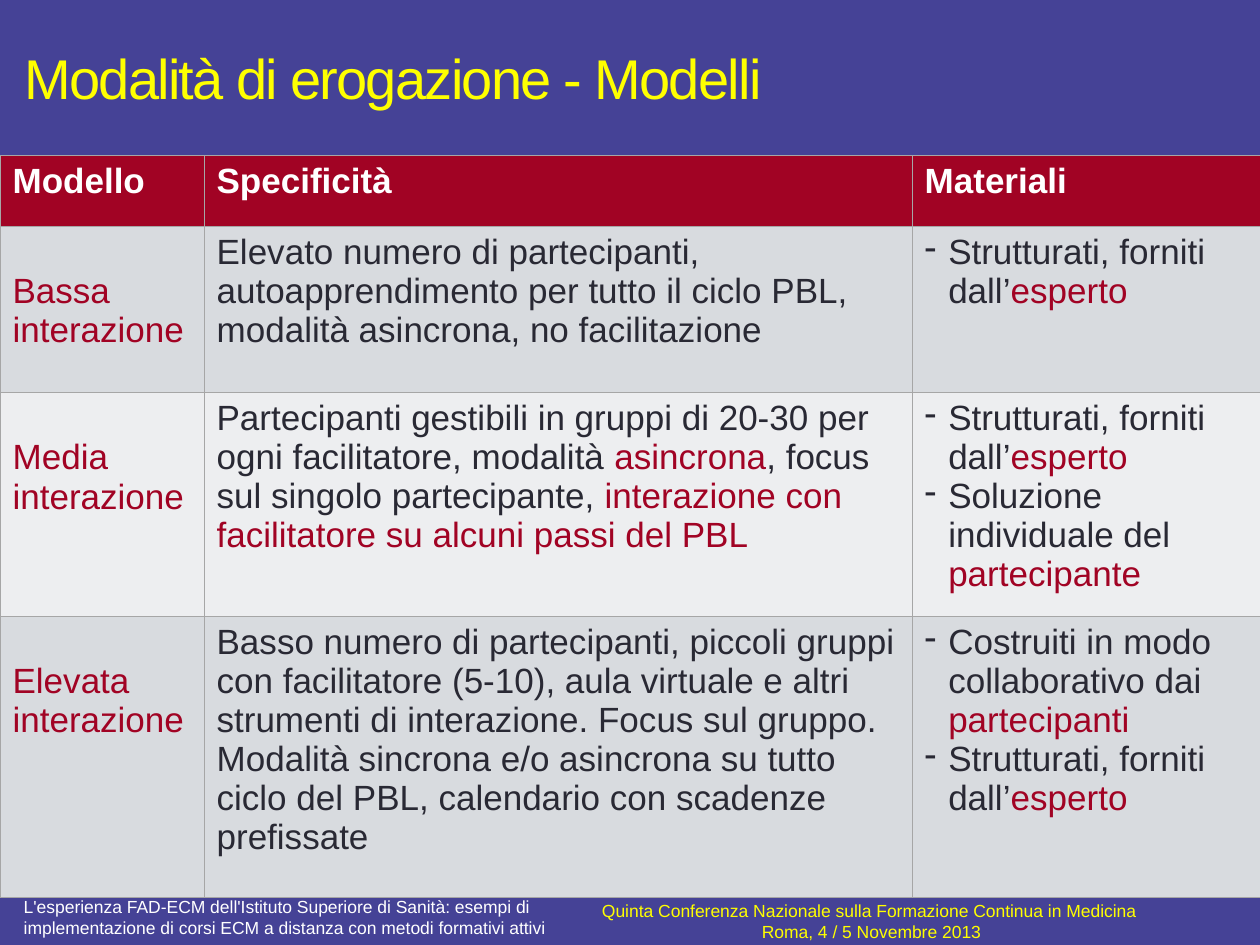
import pptx
import pptx.util
import pptx.dml.color
import pptx.enum.shapes
import pptx.enum.text
import pptx.oxml
import pptx.oxml.ns

Pt = pptx.util.Pt
ANCHOR = pptx.enum.text.MSO_ANCHOR
ALIGN = pptx.enum.text.PP_ALIGN

FONT = "Arial"
BLUE, YELLOW, WHITE = "454296", "FFFF00", "FFFFFF"
RED, DARK, BORDER = "A10324", "292934", "A6A6A6"
BANDS = ["D8DBDF", "EDEEF0"]
COLUMNS = [116.6, 404.6, 199.5]
ROWS = [40.5, 95, 128, 160.7]
LINE = 22.5

HEADERS = ["Modello", "Specificità", "Materiali"]
# Every second part between bars is highlighted.
EXPERT = "Strutturati, forniti dall’|esperto"
MODELS = [
    ("Bassa interazione",
     "Elevato numero di partecipanti, autoapprendimento per tutto il ciclo PBL, "
     "modalità asincrona, no facilitazione",
     [EXPERT]),
    ("Media interazione",
     "Partecipanti gestibili in gruppi di 20-30 per ogni facilitatore, modalità "
     "|asincrona|, focus sul singolo partecipante, "
     "|interazione con facilitatore su alcuni passi del PBL",
     [EXPERT, "Soluzione individuale del |partecipante"]),
    ("Elevata interazione",
     "Basso numero di partecipanti, piccoli gruppi con facilitatore (5-10), aula "
     "virtuale e altri strumenti di interazione. Focus sul gruppo. Modalità "
     "sincrona e/o asincrona su tutto ciclo del PBL, calendario con scadenze "
     "prefissate",
     ["Costruiti in modo collaborativo dai |partecipanti", EXPERT]),
]


def rgb(color):
    return pptx.dml.color.RGBColor.from_string(color)


def format_run(r, size, color, bold=False):
    r.font.name = FONT
    r.font.size = Pt(size)
    r.font.bold = bold
    r.font.color.rgb = rgb(color)


def add_band(s, left, top, width, height):
    sp = s.shapes.add_shape(pptx.enum.shapes.MSO_SHAPE.RECTANGLE,
                            Pt(left), Pt(top), Pt(width), Pt(height))
    sp.shadow.inherit = False
    sp.fill.solid()
    sp.fill.fore_color.rgb = rgb(BLUE)
    sp.line.fill.background()


def add_text(s, box, lines, size, color, anchor=ANCHOR.TOP, align=ALIGN.LEFT):
    sp = s.shapes.add_textbox(*[Pt(v) for v in box])
    tf = sp.text_frame
    tf.word_wrap = True
    tf.vertical_anchor = anchor
    tf.text = "\n".join(lines)
    for p in tf.paragraphs:
        p.alignment = align
        for r in p.runs:
            format_run(r, size, color)
    return tf


def set_borders(cell):
    tcPr = cell._tc.get_or_add_tcPr()
    for i, side in enumerate(("lnL", "lnR", "lnT", "lnB")):
        tcPr.insert(i, pptx.oxml.parse_xml(
            f'<a:{side} {pptx.oxml.ns.nsdecls("a")} w="{Pt(0.5)}"><a:solidFill>'
            f'<a:srgbClr val="{BORDER}"/></a:solidFill></a:{side}>'))


def set_dash(p):
    pPr = p._p.get_or_add_pPr()
    pPr.set("marL", str(Pt(13.5)))
    pPr.set("indent", str(-Pt(13.5)))
    pPr.append(pptx.oxml.parse_xml(
        f'<a:buChar {pptx.oxml.ns.nsdecls("a")} char="-"/>'))


def fill_cell(cell, lines, fill, colors, bold=False, dashed=False):
    """Write lines whose bar-separated parts alternate between the colors."""
    cell.fill.solid()
    cell.fill.fore_color.rgb = rgb(fill)
    set_borders(cell)
    tf = cell.text_frame
    for i, line in enumerate(lines):
        p = tf.paragraphs[0] if i == 0 else tf.add_paragraph()
        if dashed:
            set_dash(p)
        for j, part in enumerate(line.split("|")):
            r = p.add_run()
            r.text = part
            format_run(r, 20, colors[j % len(colors)], bold)


def add_models_table(s):
    table = s.shapes.add_table(len(ROWS), len(COLUMNS), Pt(0), Pt(88.9),
                               Pt(sum(COLUMNS)), Pt(sum(ROWS))).table
    for column, width in zip(table.columns, COLUMNS):
        column.width = Pt(width)
    for row, height in zip(table.rows, ROWS):
        row.height = Pt(height)
    for i, header in enumerate(HEADERS):
        fill_cell(table.cell(0, i), [header], RED, [WHITE], bold=True)
    for i, (name, features, materials) in enumerate(MODELS):
        fill = BANDS[i % 2]
        model, feature, material = table.rows[i + 1].cells
        fill_cell(model, [name], fill, [RED])
        model.margin_top = Pt(3.6 + LINE)
        fill_cell(feature, [features], fill, [DARK, RED])
        fill_cell(material, materials, fill, [DARK, RED], dashed=True)


def main():
    prs = pptx.Presentation()
    prs.slide_width, prs.slide_height = Pt(720), Pt(540)
    s = prs.slides.add_slide(prs.slide_layouts[6])
    add_band(s, 0, 512, 722, 28.8)
    add_band(s, -0.7, 0, 722, 90.7)
    title = add_text(s, (6.8, 5, 540, 77.8), ["Modalità di erogazione - Modelli"],
                     32, YELLOW, ANCHOR.MIDDLE)
    title.paragraphs[0].runs[0].font._element.set("spc", "-100")
    add_models_table(s)
    add_text(s, (334.8, 513.4, 326.2, 25.9),
             ["Quinta Conferenza Nazionale sulla Formazione Continua in Medicina ",
              "Roma, 4 / 5 Novembre 2013"],
             10, YELLOW, ANCHOR.MIDDLE, ALIGN.CENTER)
    course = add_text(s, (6.5, 512, 321, 28),
                      ["L'esperienza FAD-ECM dell'Istituto Superiore di Sanità: esempi di "
                       "implementazione di corsi ECM a distanza con metodi formativi attivi"],
                      10, WHITE)
    course.margin_top = 0
    prs.save("out.pptx")


if __name__ == "__main__":
    main()
